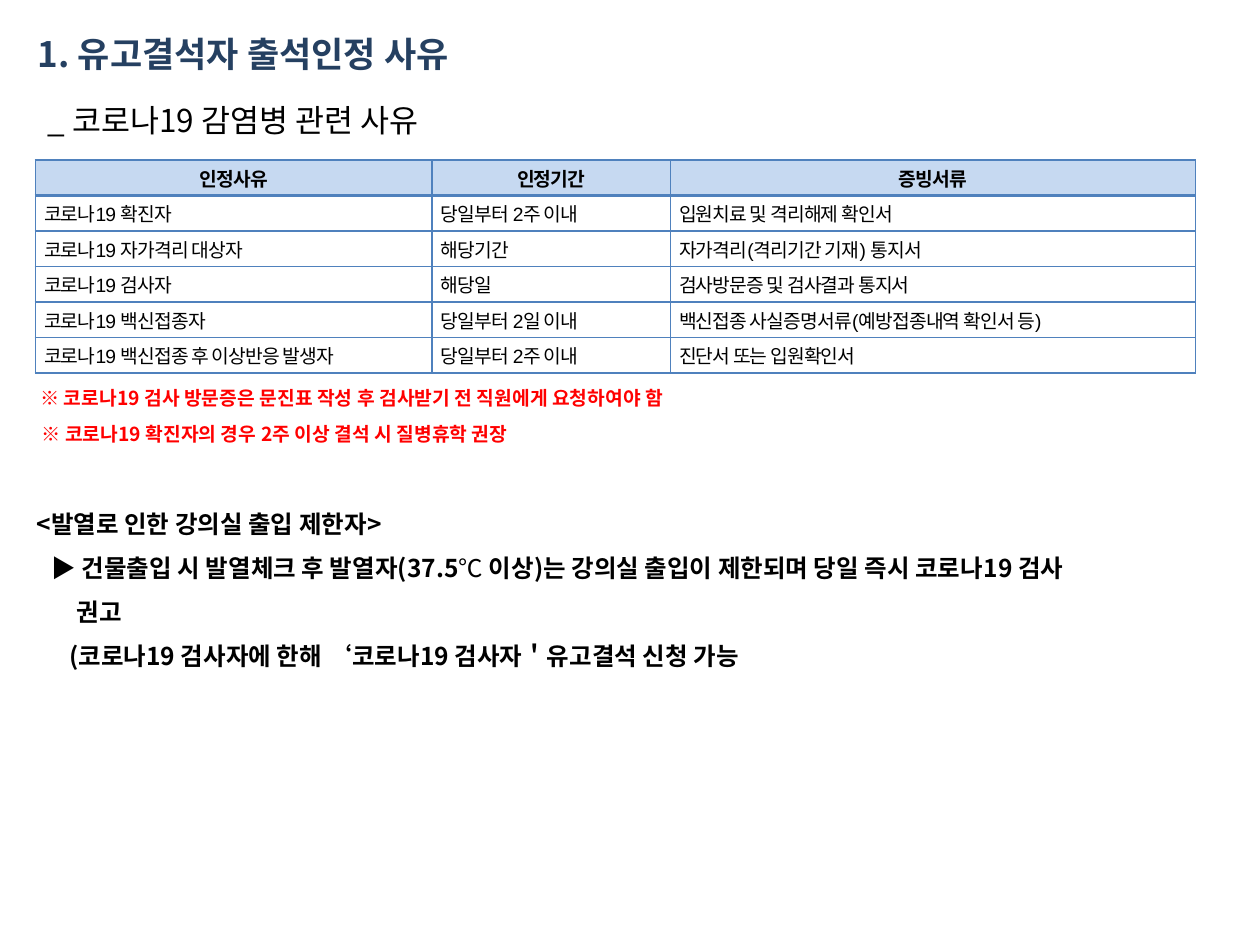
from dataclasses import dataclass

from pptx import Presentation
from pptx.dml.color import RGBColor
from pptx.enum.text import MSO_ANCHOR, MSO_AUTO_SIZE, PP_ALIGN
from pptx.oxml.ns import qn
from pptx.util import Emu, Pt
from lxml import etree

EMU_PER_PX = 9144  # 100 px to the inch
TOP, MIDDLE = MSO_ANCHOR.TOP, MSO_ANCHOR.MIDDLE
LEFT, CENTER, JUSTIFY = PP_ALIGN.LEFT, PP_ALIGN.CENTER, PP_ALIGN.JUSTIFY
FIT_SHAPE = MSO_AUTO_SIZE.SHAPE_TO_FIT_TEXT


@dataclass(frozen=True)
class Theme:
    navy: str = "254061"
    black: str = "000000"
    red: str = "FF0000"
    line: str = "4F81BD"
    header_fill: str = "C6D9F1"
    korean: str = "Noto Sans CJK KR"
    latin: str = "Arial"
    title_size: int = 20
    subtitle_size: int = 18
    body_size: int = 14
    small_size: int = 11


THEME = Theme()


@dataclass(frozen=True)
class Style:
    size: int
    color: str = THEME.black
    bold: bool = False
    font: str = THEME.korean
    tracking: int = 0  # hundredths of a point


@dataclass(frozen=True)
class Area:
    left: int
    top: int
    width: int
    height: int

    def emu(self) -> list[Emu]:
        return [px(n) for n in (self.left, self.top, self.width, self.height)]


@dataclass(frozen=True)
class Label:
    text: str
    area: Area
    style: Style
    wrap: bool = False


@dataclass(frozen=True)
class Line:
    indent: int
    spans: tuple[tuple[str, Style], ...]


def px(length: int) -> Emu:
    return Emu(length * EMU_PER_PX)


TITLE = Style(THEME.title_size, THEME.navy, True)
SUBTITLE = Style(THEME.subtitle_size)
NOTE = Style(THEME.small_size, THEME.red, True)
BODY = Style(THEME.body_size, bold=True)
BODY_PLAIN = Style(THEME.body_size)
HEADER = Style(THEME.small_size, bold=True, tracking=-50)
CELL = Style(THEME.small_size, font=THEME.latin, tracking=-50)

HEADING = Label("1. 유고결석자 출석인정 사유", Area(20, 21, 382, 44), TITLE)
LABELS = (
    Label("_ 코로나19 감염병 관련 사유", Area(28, 75, 347, 40), SUBTITLE),
    Label("※ 코로나19 검사 방문증은 문진표 작성 후 검사받기 전 직원에게 요청하여야 함",
          Area(22, 302, 643, 29), NOTE, True),
    Label("※ 코로나19 확진자의 경우 2주 이상 결석 시 질병휴학 권장",
          Area(23, 330, 432, 29), NOTE),
)

TABLE_AREA = Area(28, 127, 921, 169)
COLUMNS = (315, 189, 417)
ROWS = (
    ("인정사유", "인정기간", "증빙서류"),
    ("코로나19 확진자", "당일부터 2주 이내", "입원치료 및 격리해제 확인서"),
    ("코로나19 자가격리 대상자", "해당기간", "자가격리(격리기간 기재) 통지서"),
    ("코로나19 검사자", "해당일", "검사방문증 및 검사결과 통지서"),
    ("코로나19 백신접종자", "당일부터 2일 이내", "백신접종 사실증명서류(예방접종내역 확인서 등)"),
    ("코로나19 백신접종 후 이상반응 발생자", "당일부터 2주 이내", "진단서 또는 입원확인서"),
)

FEVER_AREA = Area(19, 387, 953, 151)
FEVER_LINES = (
    Line(0, (("<발열로 인한 강의실 출입 제한자>", BODY),)),
    Line(12, (("▶ 건물출입 시 발열체크 후 발열자(37.5", BODY), ("℃", BODY_PLAIN),
              (" 이상)는 강의실 출입이 제한되며 당일 즉시 코로나19 검사", BODY))),
    Line(32, (("권고", BODY),)),
    Line(26, (("(코로나19 검사자에 한해 ‘코로나19 검사자＇유고결석 신청 가능", BODY),)),
)


def add_span(para, text: str, style: Style) -> None:
    span = para.add_run()
    span.text = text
    font = span.font
    font.size, font.bold, font.name = Pt(style.size), style.bold, style.font
    font.color.rgb = RGBColor.from_string(style.color)
    properties = span._r.get_or_add_rPr()
    etree.SubElement(properties, qn("a:ea")).set("typeface", THEME.korean)
    if style.tracking:
        properties.set("spc", str(style.tracking))


def place(box, area: Area, wrap: bool):
    box.left, box.top, box.width, box.height = area.emu()
    frame = box.text_frame
    frame.word_wrap = wrap
    frame.auto_size = FIT_SHAPE
    frame.vertical_anchor = TOP
    return frame


def fill_label(box, label: Label) -> None:
    para = place(box, label.area, label.wrap).paragraphs[0]
    para.alignment = LEFT
    add_span(para, label.text, label.style)


def fill_body(box, area: Area, lines: tuple[Line, ...]) -> None:
    frame = place(box, area, True)
    for index, line in enumerate(lines):
        para = frame.add_paragraph() if index else frame.paragraphs[0]
        para.line_spacing = 1.5
        para.space_before = Pt(0)
        properties = para._p.get_or_add_pPr()
        properties.set("marL", str(px(line.indent)))
        properties.set("indent", "0")
        etree.SubElement(properties, qn("a:buNone"))
        for text, style in line.spans:
            add_span(para, text, style)


def set_borders(cell, widths: dict[str, int]) -> None:
    properties = cell._tc.get_or_add_tcPr()
    for index, (side, width) in enumerate(widths.items()):
        border = etree.Element(qn(f"a:ln{side}"), w=str(Pt(width)))
        fill = etree.SubElement(border, qn("a:solidFill"))
        etree.SubElement(fill, qn("a:srgbClr")).set("val", THEME.line)
        properties.insert(index, border)


def fill_cell(cell, text: str, row: int) -> None:
    is_header = row == 0
    cell.margin_left = cell.margin_right = px(7)
    cell.margin_top = cell.margin_bottom = px(2)
    cell.vertical_anchor = MIDDLE
    if is_header:
        cell.fill.solid()
        cell.fill.fore_color.rgb = RGBColor.from_string(THEME.header_fill)
    else:
        cell.fill.background()
    set_borders(cell, {"L": 1, "R": 1, "T": 2 if row == 1 else 1, "B": 2 if is_header else 1})
    para = cell.text_frame.paragraphs[0]
    para.alignment = CENTER if is_header else JUSTIFY
    add_span(para, text, HEADER if is_header else CELL)


def add_reason_table(page) -> None:
    table = page.shapes.add_table(len(ROWS), len(COLUMNS), *TABLE_AREA.emu()).table
    table.first_row = table.horz_banding = False
    for column, width in zip(table.columns, COLUMNS):
        column.width = px(width)
    for row, texts in enumerate(ROWS):
        for column, text in enumerate(texts):
            fill_cell(table.cell(row, column), text, row)


def main() -> None:
    deck = Presentation()
    deck.slide_width, deck.slide_height = px(1000), px(750)
    page = deck.slides.add_slide(deck.slide_layouts[1])

    # Heading, subtitle and red notes
    fill_label(page.shapes.title, HEADING)
    for label in LABELS:
        fill_label(page.shapes.add_textbox(*label.area.emu()), label)

    # Accepted reasons
    add_reason_table(page)

    # Entry limits for fever
    fill_body(page.placeholders[1], FEVER_AREA, FEVER_LINES)

    deck.save("out.pptx")


if __name__ == "__main__":
    main()
